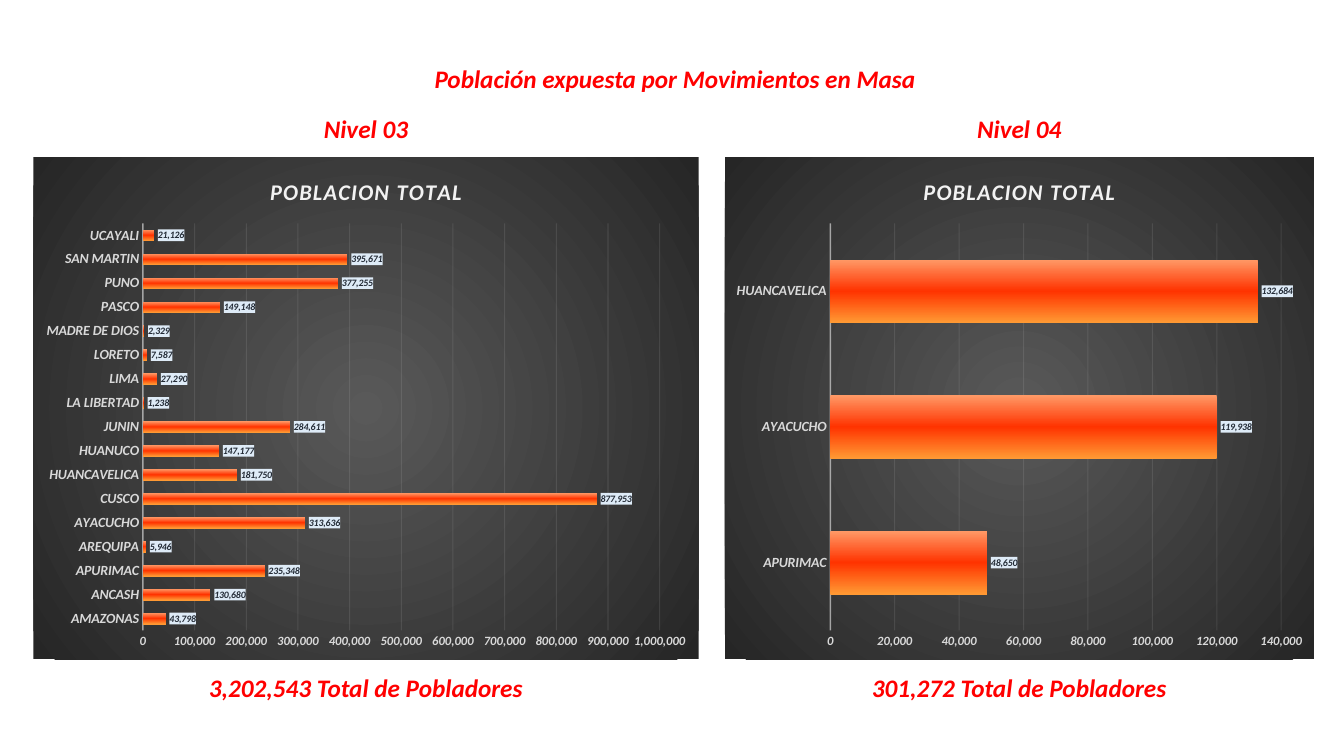
"""Slide on the population exposed to mass movements, by hazard level."""
from dataclasses import dataclass

from pptx import Presentation
from pptx.chart.data import CategoryChartData
from pptx.dml.color import RGBColor
from pptx.enum.chart import XL_CHART_TYPE, XL_LABEL_POSITION, XL_TICK_MARK
from pptx.enum.text import MSO_ANCHOR, PP_ALIGN
from pptx.oxml import parse_xml
from pptx.oxml.ns import nsdecls, qn
from pptx.oxml.xmlchemy import OxmlElement
from pptx.util import Inches, Pt

BAR = XL_CHART_TYPE.BAR_CLUSTERED
OUTSIDE_END = XL_LABEL_POSITION.OUTSIDE_END
NO_TICK = XL_TICK_MARK.NONE
MIDDLE = MSO_ANCHOR.MIDDLE
CENTER = PP_ALIGN.CENTER


@dataclass(frozen=True)
class Theme:
    font: str = "Calibri"
    heading: str = "FF0000"
    chart_title: str = "F2F2F2"
    axis_text: str = "D9D9D9"
    axis_line: str = "F2F2F2"
    label_text: str = "222A35"
    label_fill: str = "DEEBF7"
    background: tuple = ((0, "595959"), (100, "262626"))
    bar: tuple = ((0, "FF9966"), (50, "FF3300"), (100, "FF9933"))
    heading_size: int = 18
    chart_title_size: int = 16
    category_size: int = 10
    value_size: int = 9
    label_size: int = 7


THEME = Theme()
SERIES_NAME = "POBLACION TOTAL"
LINEAR = '<a:lin ang="5400000" scaled="0"/>'
CIRCLE = ('<a:path path="circle"><a:fillToRect l="50000" t="50000" '
          'r="50000" b="50000"/></a:path>')

LEVEL_3 = {
    "AMAZONAS": 43798, "ANCASH": 130680, "APURIMAC": 235348,
    "AREQUIPA": 5946, "AYACUCHO": 313636, "CUSCO": 877953,
    "HUANCAVELICA": 181750, "HUANUCO": 147177, "JUNIN": 284611,
    "LA LIBERTAD": 1238, "LIMA": 27290, "LORETO": 7587,
    "MADRE DE DIOS": 2329, "PASCO": 149148, "PUNO": 377255,
    "SAN MARTIN": 395671, "UCAYALI": 21126,
}
LEVEL_4 = {"APURIMAC": 48650, "AYACUCHO": 119938, "HUANCAVELICA": 132684}


def style_font(font, size, color):
    """Apply the slide's bold italic face."""
    font.name = THEME.font
    font.size = Pt(size)
    font.bold = font.italic = True
    font.color.rgb = RGBColor.from_string(color)


def write_heading(sp, text):
    """Fill a shape with one centred heading line."""
    tf = sp.text_frame
    tf.word_wrap = True
    tf.vertical_anchor = MIDDLE
    tf.text = text
    p = tf.paragraphs[0]
    p.alignment = CENTER
    style_font(p.runs[0].font, THEME.heading_size, THEME.heading)


def add_heading(s, text, center, top, width):
    """Add a heading box centred on a given horizontal position."""
    sp = s.shapes.add_textbox(Inches(center - width / 2), Inches(top),
                              Inches(width), Inches(0.4))
    write_heading(sp, text)


def shape_properties(fill):
    """Return borderless chart shape properties around a fill."""
    return parse_xml(f'<c:spPr {nsdecls("c", "a")}>{fill}'
                     '<a:ln><a:noFill/></a:ln></c:spPr>')


def gradient(stops, direction):
    """Return gradient fill markup."""
    marks = "".join(f'<a:gs pos="{pos * 1000}"><a:srgbClr val="{color}"/></a:gs>'
                    for pos, color in stops)
    return f'<a:gradFill rotWithShape="1"><a:gsLst>{marks}</a:gsLst>{direction}</a:gradFill>'


def style_line(line, width, opacity):
    """Draw a translucent light line."""
    line.width = Pt(width)
    line.color.rgb = RGBColor.from_string(THEME.axis_line)
    alpha = OxmlElement("a:alpha")
    alpha.set("val", str(opacity * 1000))
    ln = line._get_or_add_ln()
    ln.find(".//" + qn("a:srgbClr")).append(alpha)


def style_axes(chart, maximum, step):
    """Format both axes and the gridlines."""
    cat, val = chart.category_axis, chart.value_axis
    for axis, size in ((cat, THEME.category_size), (val, THEME.value_size)):
        axis.major_tick_mark = axis.minor_tick_mark = NO_TICK
        style_font(axis.tick_labels.font, size, THEME.axis_text)
    cat.has_major_gridlines = False
    style_line(cat.format.line, 1, 54)
    val.minimum_scale, val.maximum_scale, val.major_unit = 0, maximum, step
    val.tick_labels.number_format = "#,##0"
    val.tick_labels.number_format_is_linked = False
    val.format.line.fill.background()
    val.has_major_gridlines = True
    style_line(val.major_gridlines.format.line, 0.75, 10)


def style_labels(plot):
    """Show values in light boxes past the bar ends."""
    plot.has_data_labels = True
    labels = plot.data_labels
    labels.show_value = True
    labels.position = OUTSIDE_END
    labels.number_format = "#,##0"
    labels.number_format_is_linked = False
    style_font(labels.font, THEME.label_size, THEME.label_text)
    fill = f'<a:solidFill><a:srgbClr val="{THEME.label_fill}"/></a:solidFill>'
    labels._element.find(qn("c:txPr")).addprevious(shape_properties(fill))


def add_population_chart(s, left, width, population, maximum, step):
    """Add a dark bar chart of population by region."""
    data = CategoryChartData(number_format="#,##0")
    data.categories = list(population)
    data.add_series(SERIES_NAME, list(population.values()))
    chart = s.shapes.add_chart(BAR, Inches(left), Inches(1.56), Inches(width),
                               Inches(4.98), data).chart
    chart.font.name = THEME.font
    chart.font.size = Pt(THEME.category_size)
    background = shape_properties(gradient(THEME.background, CIRCLE))
    chart._chartSpace.find(qn("c:txPr")).addprevious(background)
    chart.has_legend = False
    chart.has_title = True
    title = chart.chart_title
    title.include_in_layout = False
    title.text_frame.text = SERIES_NAME
    font = title.text_frame.paragraphs[0].runs[0].font
    style_font(font, THEME.chart_title_size, THEME.chart_title)
    font._element.set("spc", "100")
    style_axes(chart, maximum, step)
    plot = chart.plots[0]
    plot.gap_width, plot.overlap = 115, -20
    plot.vary_by_categories = False
    ser = plot.series[0]
    ser.invert_if_negative = False
    sp_pr = ser._element.get_or_add_spPr()
    sp_pr.getparent().replace(sp_pr, shape_properties(gradient(THEME.bar, LINEAR)))
    style_labels(plot)


def add_level(s, name, total, left, width, population, maximum, step):
    """Add a level's heading, chart and total."""
    center = left + width / 2
    add_population_chart(s, left, width, population, maximum, step)
    add_heading(s, name, center, 1.07, 1.1)
    add_heading(s, f"{total} Total de Pobladores", center, 6.62, 3.36)


def main():
    """Build and save the slide."""
    prs = Presentation()
    prs.slide_width, prs.slide_height = Inches(13.33), Inches(7.5)
    s = prs.slides.add_slide(prs.slide_layouts[5])
    title = s.shapes.title
    title.left, title.top = Inches(4.18), Inches(0.58)
    title.width, title.height = Inches(5.03), Inches(0.4)
    write_heading(title, "Población expuesta por Movimientos en Masa")
    add_level(s, "Nivel 03", "3,202,543", 0.33, 6.6, LEVEL_3, 1000000, 100000)
    add_level(s, "Nivel 04", "301,272", 7.19, 5.84, LEVEL_4, 140000, 20000)
    prs.save("out.pptx")


if __name__ == "__main__":
    main()
